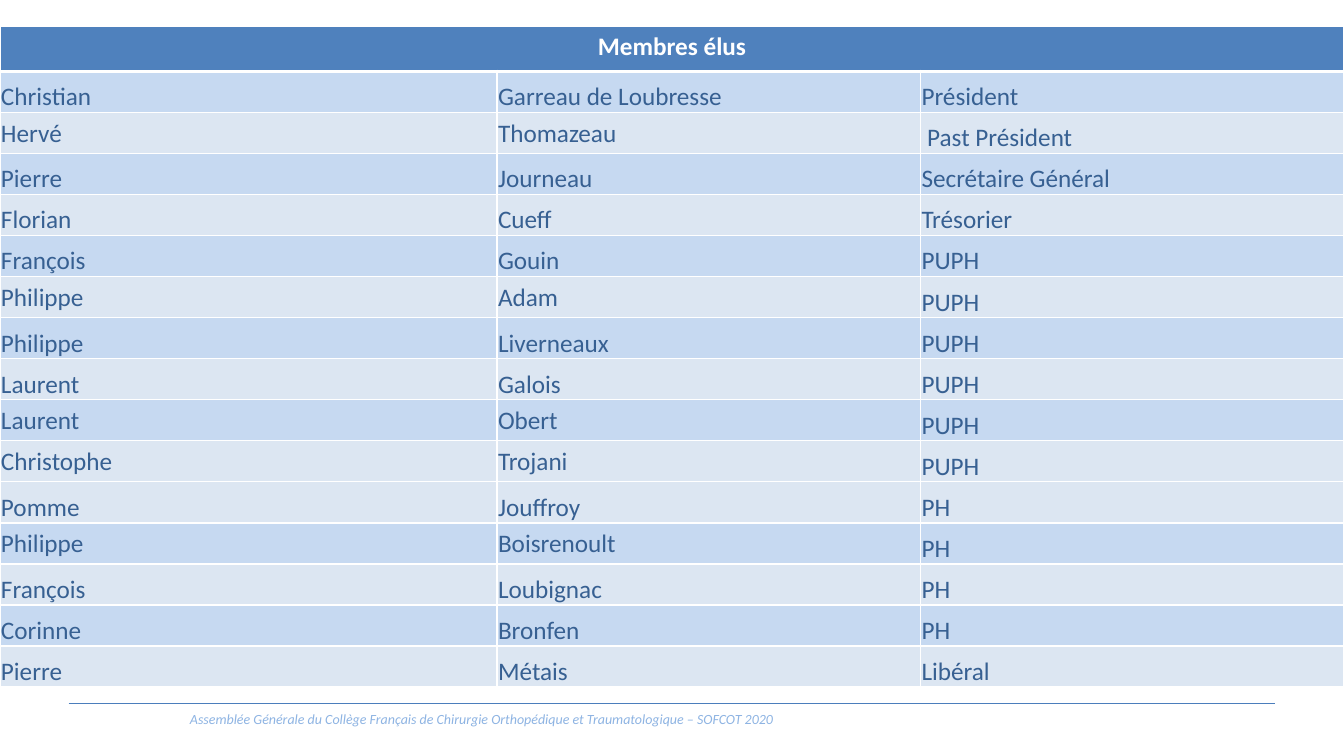
from lxml import etree
from pptx import Presentation
from pptx.dml.color import RGBColor
from pptx.enum.shapes import MSO_CONNECTOR
from pptx.enum.text import MSO_ANCHOR, MSO_AUTO_SIZE, PP_ALIGN
from pptx.oxml.ns import qn
from pptx.util import Inches, Pt

DARK, LIGHT = "C6D9F1", "DCE6F2"
BOTTOM, MIDDLE = MSO_ANCHOR.BOTTOM, MSO_ANCHOR.MIDDLE

# First name, surname, position, row fill, anchor of the two name cells
MEMBERS = [
    ("Christian", "Garreau de Loubresse", "Président", DARK, BOTTOM),
    ("Hervé", "Thomazeau", " Past Président", LIGHT, MIDDLE),
    ("Pierre", "Journeau", "Secrétaire Général", DARK, BOTTOM),
    ("Florian", "Cueff", "Trésorier", LIGHT, BOTTOM),
    ("François", "Gouin", "PUPH", DARK, BOTTOM),
    ("Philippe", "Adam", "PUPH", LIGHT, MIDDLE),
    ("Philippe", "Liverneaux", "PUPH", DARK, BOTTOM),
    ("Laurent", "Galois", "PUPH", LIGHT, BOTTOM),
    ("Laurent", "Obert", "PUPH", DARK, MIDDLE),
    ("Christophe", "Trojani", "PUPH", LIGHT, MIDDLE),
    ("Pomme", "Jouffroy", "PH", LIGHT, BOTTOM),
    ("Philippe", "Boisrenoult", "PH", DARK, MIDDLE),
    ("François", "Loubignac", "PH", LIGHT, BOTTOM),
    ("Corinne", "Bronfen", "PH", DARK, BOTTOM),
    ("Pierre", "Métais", "Libéral", LIGHT, BOTTOM),
]


def style_text(paragraph, size, color, bold=False, italic=False):
    for run in paragraph.runs:
        run.font.name = "Calibri"
        run.font.size = Pt(size)
        run.font.bold = bold
        run.font.italic = italic
        run.font.color.rgb = RGBColor.from_string(color)


def style_cell(cell, fill, top=1, bottom=1):
    """Fill the cell and give it white borders; widths are in points."""
    properties = cell._tc.get_or_add_tcPr()
    for side, width in (("L", 1), ("R", 1), ("T", top), ("B", bottom)):
        border = etree.SubElement(properties, qn(f"a:ln{side}"), w=str(Pt(width)))
        solid = etree.SubElement(border, qn("a:solidFill"))
        etree.SubElement(solid, qn("a:srgbClr"), val="FFFFFF")
    cell.fill.solid()
    cell.fill.fore_color.rgb = RGBColor.from_string(fill)


presentation = Presentation()
presentation.slide_width = Inches(13.33)
presentation.slide_height = Inches(7.5)
slide = presentation.slides.add_slide(presentation.slide_layouts[6])

# Footer
footer_line = slide.shapes.add_connector(
    MSO_CONNECTOR.STRAIGHT, Inches(0.68), Inches(6.98), Inches(12.65), Inches(6.98))
footer_line.line.color.rgb = RGBColor.from_string("4B7EBC")
footer_line.line.width = Pt(0.75)
etree.SubElement(footer_line._element.spPr, qn("a:effectLst"))

footer = slide.shapes.add_textbox(Inches(0.68), Inches(7), Inches(8.19), Inches(0.27))
footer.text_frame.word_wrap = True
footer.text_frame.auto_size = MSO_AUTO_SIZE.SHAPE_TO_FIT_TEXT
footer.text_frame.text = (
    "Assemblée Générale du Collège Français de Chirurgie Orthopédique "
    "et Traumatologique – SOFCOT 2020")
footer_paragraph = footer.text_frame.paragraphs[0]
footer_paragraph.alignment = PP_ALIGN.CENTER
style_text(footer_paragraph, 10, "8EB4E3", italic=True)

# Table of elected members
table = slide.shapes.add_table(
    len(MEMBERS) + 1, 3, Inches(0), Inches(0.26), Inches(13.33), Inches(6.56)).table
for column, width in zip(table.columns, (4.93, 4.2, 4.2)):
    column.width = Inches(width)
for row in table.rows:
    row.height = Inches((6.56 - 0.45) / len(MEMBERS))
table.rows[0].height = Inches(0.45)

for cell in table.rows[0].cells:
    style_cell(cell, "4F81BD", bottom=3)
header = table.cell(0, 0)
header.merge(table.cell(0, 2))
header.text_frame.text = "Membres élus"
header_paragraph = header.text_frame.paragraphs[0]
header_paragraph.alignment = PP_ALIGN.CENTER
style_text(header_paragraph, 18, "FFFFFF", bold=True)

for row_index, (first_name, surname, position, fill, name_anchor) in enumerate(MEMBERS, 1):
    anchors = (name_anchor, name_anchor, BOTTOM)
    for column_index, text in enumerate((first_name, surname, position)):
        cell = table.cell(row_index, column_index)
        style_cell(cell, fill, top=3 if row_index == 1 else 1)
        cell.margin_left = cell.margin_right = cell.margin_top = Inches(0.01)
        cell.margin_bottom = 0
        cell.vertical_anchor = anchors[column_index]
        cell.text_frame.text = text
        style_text(cell.text_frame.paragraphs[0], 18, "376092")

presentation.save("out.pptx")
